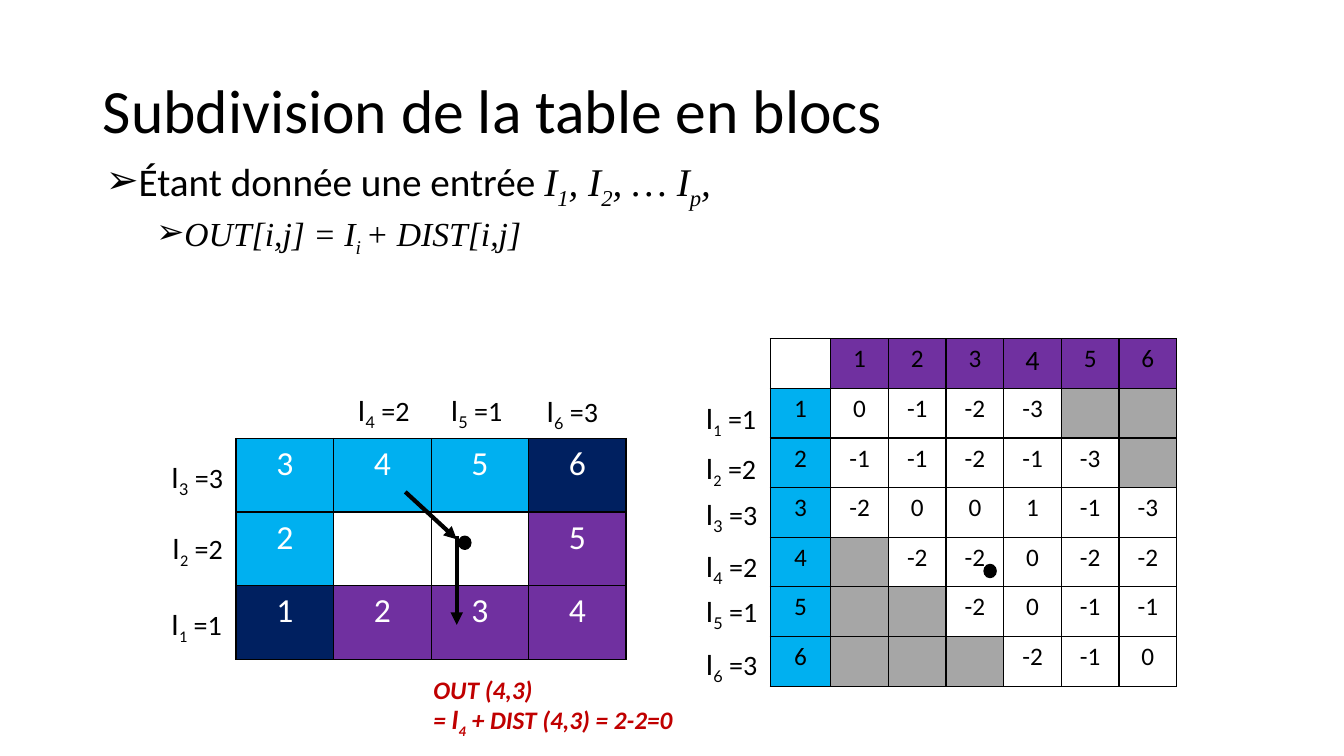
"""Builds the slide on splitting the table into blocks."""
from lxml import etree
from pptx import Presentation
from pptx import util as u
from pptx.dml.color import RGBColor
from pptx.enum import shapes, text
from pptx.oxml.ns import qn

PX = 9144
BLACK = RGBColor(0x00, 0x00, 0x00)
WHITE = RGBColor(0xFF, 0xFF, 0xFF)
BLUE = RGBColor(0x00, 0xB0, 0xF0)
NAVY = RGBColor(0x00, 0x20, 0x60)
PURPLE = RGBColor(0x70, 0x30, 0xA0)
GREY = RGBColor(0xA6, 0xA6, 0xA6)
RED = RGBColor(0xC0, 0x00, 0x00)
SERIF = "Times New Roman"

INPUTS = [1, 2, 3, 2, 1, 3]
BLOCK = [["3", "4", "5", "6"], ["2", "", "", "5"], ["1", "2", "3", "4"]]
BLOCK_FILLS = [[BLUE, BLUE, BLUE, NAVY],
               [BLUE, WHITE, WHITE, PURPLE],
               [NAVY, PURPLE, PURPLE, PURPLE]]
DIST = [["", "1", "2", "3", "4", "5", "6"],
        ["1", "0", "-1", "-2", "-3", "", ""],
        ["2", "-1", "-1", "-2", "-1", "-3", ""],
        ["3", "-2", "0", "0", "1", "-1", "-3"],
        ["4", "", "-2", "-2", "0", "-2", "-2"],
        ["5", "", "", "-2", "0", "-1", "-1"],
        ["6", "", "", "", "-2", "-1", "0"]]
LABELS = [(1, 690, 393), (2, 690, 443), (3, 690, 489),
          (4, 690, 540), (5, 690, 585), (6, 690, 637),
          (1, 160, 598), (2, 161, 522), (3, 160, 452),
          (4, 345, 385), (5, 437, 385), (6, 532, 386)]


def px(*lengths):
    return [round(n * PX) for n in lengths]


def style(r, size, color=BLACK, font="Calibri", bold=None, italic=None):
    r.font.size, r.font.name = u.Pt(size), font
    r.font.bold, r.font.italic = bold, italic
    r.font.color.rgb = color


def add_runs(p, parts, size, **look):
    """Adds (text, font, is_subscript) parts to a paragraph."""
    for words, font, subscript in parts:
        r = p.add_run()
        r.text = words
        style(r, size, font=font, **look)
        if subscript:
            r._r.get_or_add_rPr().set("baseline", "-25000")


def place(sp, *box):
    sp.left, sp.top, sp.width, sp.height = px(*box)


def add_title(s, words):
    """Fills the title placeholder."""
    sp = s.shapes.title
    place(sp, 92, 40, 1150, 145)
    tf = sp.text_frame
    tf.text = words
    tf.auto_size = text.MSO_AUTO_SIZE.NONE
    tf.vertical_anchor = text.MSO_ANCHOR.MIDDLE
    p = tf.paragraphs[0]
    p.alignment, p.line_spacing = text.PP_ALIGN.LEFT, 0.9
    style(p.runs[0], 44)


def format_bullet(p, level, margin, before):
    p.level, p.line_spacing, p.space_before = level, 0.9, u.Pt(before)
    pPr = p._p.get_or_add_pPr()
    pPr.set("marL", str(margin * PX))
    pPr.set("indent", str(-25 * PX))
    etree.SubElement(pPr, qn("a:buChar")).set("char", "➢")


def add_body(s):
    """Fills the body placeholder with the two bullets."""
    sp = s.placeholders[1]
    place(sp, 95, 152, 1150, 202)
    tf = sp.text_frame
    tf.auto_size = text.MSO_AUTO_SIZE.NONE
    p = tf.paragraphs[0]
    format_bullet(p, 0, 25, 10)
    add_runs(p, [("Étant donnée une entrée ", "Calibri", False)], 28)
    add_runs(p, [("I", SERIF, False), ("1", SERIF, True),
                 (", I", SERIF, False), ("2", SERIF, True),
                 (", … I", SERIF, False), ("p", SERIF, True),
                 (",", SERIF, False)], 28, italic=True)
    p = tf.add_paragraph()
    format_bullet(p, 1, 75, 5)
    add_runs(p, [("OUT[i,j] = I", SERIF, False), ("i ", SERIF, True),
                 ("+ DIST[i,j]", SERIF, False)], 24, italic=True)


def add_borders(cell):
    tcPr = cell._tc.get_or_add_tcPr()
    for side in ("a:lnL", "a:lnR", "a:lnT", "a:lnB"):
        ln = etree.SubElement(tcPr, qn(side), w=str(u.Pt(1)))
        fill = etree.SubElement(ln, qn("a:solidFill"))
        etree.SubElement(fill, qn("a:srgbClr"), val=str(BLACK))


def add_grid(s, box, first_width, values, fills, size, color):
    """Adds a bordered table; columns after the first share the width."""
    rows, cols = len(values), len(values[0])
    table = s.shapes.add_table(rows, cols, *px(*box)).table
    table.first_row = table.horz_banding = False
    for j, column in enumerate(table.columns):
        rest = (box[2] - first_width) / (cols - 1)
        column.width, = px(rest if j else first_width)
    for i, row in enumerate(table.rows):
        row.height, = px(box[3] / rows)
        for cell, value, fill in zip(row.cells, values[i], fills[i]):
            add_borders(cell)
            cell.fill.solid()
            cell.fill.fore_color.rgb = fill
            cell.text = value
            p = cell.text_frame.paragraphs[0]
            p.alignment = text.PP_ALIGN.CENTER
            for r in p.runs:
                style(r, size, color)
    return table


def dist_fill(i, j):
    if i == 0:
        return PURPLE if j else WHITE
    if j == 0:
        return BLUE
    return WHITE if DIST[i][j] else GREY


def add_box(s, *box):
    tf = s.shapes.add_textbox(*px(*box)).text_frame
    tf.word_wrap = False
    tf.auto_size = text.MSO_AUTO_SIZE.SHAPE_TO_FIT_TEXT
    return tf


def add_label(s, index, left, top):
    tf = add_box(s, left, top, 73, 44)
    subscript_font = "Calibri" if index < 3 else "Lato"
    add_runs(tf.paragraphs[0], [("I", "Lato", False),
                                (str(index), subscript_font, True),
                                (f" ={INPUTS[index - 1]}", "Calibri", False)], 20)


def add_result(s):
    tf = add_box(s, 420, 664, 263, 71)
    look = dict(color=RED, bold=True, italic=True)
    add_runs(tf.paragraphs[0], [("OUT (4,3)", "Calibri", False)], 18, **look)
    add_runs(tf.add_paragraph(), [("= ", "Calibri", False), ("I", "Lato", False),
                                  ("4", "Calibri", True),
                                  (" + DIST (4,3) = 2-2=0", "Calibri", False)], 18, **look)


def add_arrow(s, *ends):
    sp = s.shapes.add_connector(shapes.MSO_CONNECTOR.STRAIGHT, *px(*ends))
    sp.line.color.rgb, sp.line.width = BLACK, u.Pt(3)
    etree.SubElement(sp.line._get_or_add_ln(), qn("a:tailEnd"), type="triangle")
    etree.SubElement(sp._element.spPr, qn("a:effectLst"))


def add_dot(s, left, top):
    sp = s.shapes.add_shape(shapes.MSO_SHAPE.OVAL, *px(left, top, 12, 13))
    sp.shadow.inherit = False
    sp.fill.solid()
    sp.fill.fore_color.rgb = sp.line.color.rgb = BLACK
    sp.line.width = u.Pt(1)


def main():
    prs = Presentation()
    prs.slide_width, prs.slide_height = px(1333, 750)
    s = prs.slides.add_slide(prs.slide_layouts[1])
    add_title(s, "Subdivision de la table en blocs")
    add_body(s)
    add_grid(s, (234, 435, 387, 219), 97, BLOCK, BLOCK_FILLS, 24, WHITE)
    dist_fills = [[dist_fill(i, j) for j in range(7)] for i in range(7)]
    dist = add_grid(s, (764, 336, 403, 345), 60, DIST, dist_fills, 18, BLACK)
    dist.cell(0, 4).text_frame.paragraphs[0].runs[0].font.size = u.Pt(20)
    for label in LABELS:
        add_label(s, *label)
    add_arrow(s, 402, 488, 453, 535)
    add_arrow(s, 453, 532, 453, 620)
    add_dot(s, 976, 560)
    add_dot(s, 455, 532)
    add_result(s)
    prs.save("out.pptx")


if __name__ == "__main__":
    main()
